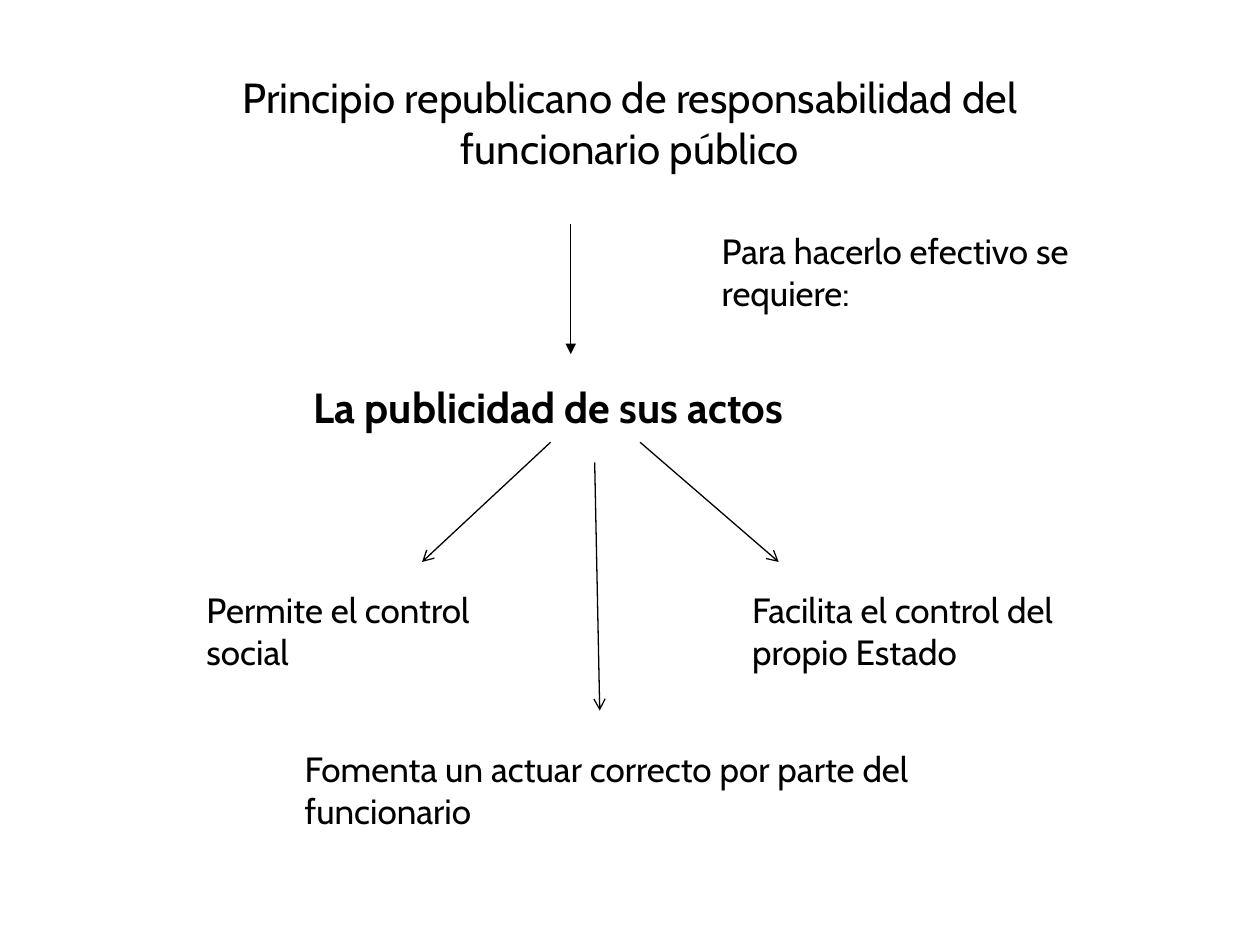
from pptx import Presentation
from pptx.dml.color import RGBColor
from pptx.enum.shapes import MSO_CONNECTOR
from pptx.enum.text import MSO_ANCHOR, MSO_AUTO_SIZE, PP_ALIGN
from pptx.oxml.ns import qn
from pptx.util import Inches, Pt
from lxml import etree

STRAIGHT = MSO_CONNECTOR.STRAIGHT
TOP = MSO_ANCHOR.TOP
NO_FIT = MSO_AUTO_SIZE.NONE
LEFT, CENTER = PP_ALIGN.LEFT, PP_ALIGN.CENTER
FONT = "Cabin"
COLORS = {"ink": "000000", "background": "FFFFFF"}


def write(shape, text, size, bold=False, align=LEFT):
    frame = shape.text_frame
    frame.word_wrap = True
    frame.auto_size = NO_FIT
    frame.vertical_anchor = TOP
    frame.text = text
    paragraph = frame.paragraphs[0]
    paragraph.alignment = align
    font = paragraph.runs[0].font
    font.name = FONT
    font.size = Pt(size)
    font.bold = bold
    font.color.rgb = RGBColor.from_string(COLORS["ink"])


prs = Presentation()
prs.slide_width, prs.slide_height = Inches(10), Inches(7.5)
slide = prs.slides.add_slide(prs.slide_layouts[5])
slide.background.fill.solid()
slide.background.fill.fore_color.rgb = RGBColor.from_string(COLORS["background"])

# Title: the principle
principle = slide.shapes.title
principle.left, principle.top = Inches(1.06), Inches(0.52)
principle.width, principle.height = Inches(7.88), Inches(0.91)
write(principle, "Principio republicano de responsabilidad del funcionario público",
      24, align=CENTER)

# Requirement and its effects: text, left, top, width, height, size, bold
statements = [
    ("Para hacerlo efectivo se requiere:", 5.63, 1.77, 3.94, 0.77, 20, False),
    ("La publicidad de sus actos", 2.39, 2.98, 6.02, 0.5, 24, True),
    ("Permite el control social", 1.54, 4.62, 2.52, 0.77, 20, False),
    ("Facilita el control del propio Estado", 5.87, 4.62, 3.31, 0.77, 20, False),
    ("Fomenta un actuar correcto por parte del funcionario",
     2.32, 5.88, 5.43, 0.77, 20, False),
]
for text, left, top, width, height, size, bold in statements:
    statement = slide.shapes.add_textbox(
        Inches(left), Inches(top), Inches(width), Inches(height))
    write(statement, text, size, bold)

# Arrows: start x, start y, end x, end y, head
arrows = [
    (4.53, 1.78, 4.53, 2.81, "triangle"),
    (4.37, 3.51, 3.35, 4.46, "arrow"),
    (5.08, 3.51, 6.18, 4.46, "arrow"),
    (4.72, 3.67, 4.76, 5.64, "arrow"),
]
for x1, y1, x2, y2, head in arrows:
    arrow = slide.shapes.add_connector(
        STRAIGHT, Inches(x1), Inches(y1), Inches(x2), Inches(y2))
    arrow.line.color.rgb = RGBColor.from_string(COLORS["ink"])
    arrow.line.width = Pt(0.75)
    etree.SubElement(arrow.line._get_or_add_ln(), qn("a:tailEnd"), type=head)
    etree.SubElement(arrow._element.spPr, qn("a:effectLst"))

prs.save("out.pptx")
